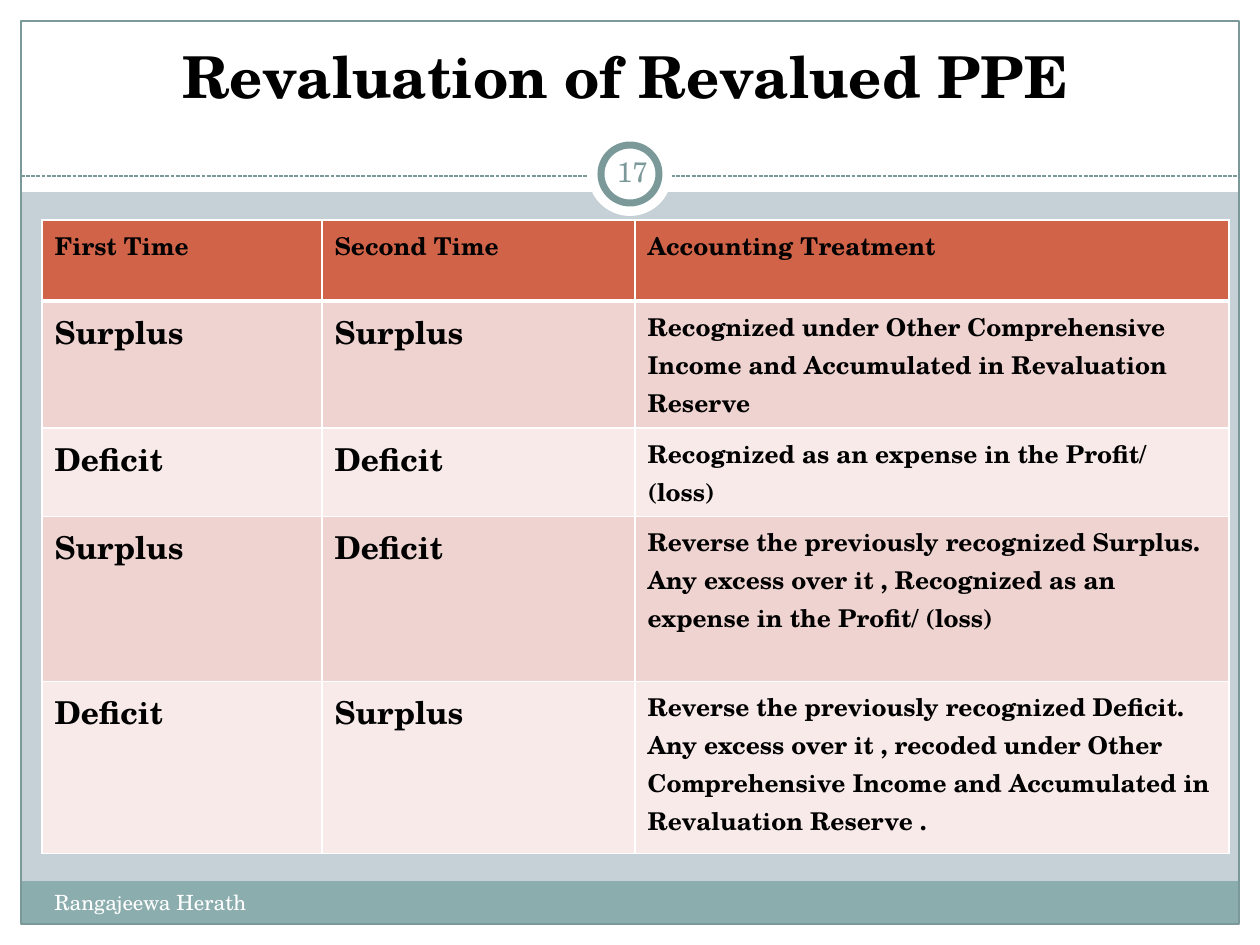
"""Build the slide on the revaluation of revalued PPE."""
import dataclasses
import typing

import pptx
import pptx.dml.color
import pptx.enum.dml
import pptx.enum.shapes
import pptx.enum.text
import pptx.oxml
import pptx.oxml.ns
import pptx.util

RGB = pptx.dml.color.RGBColor
Pt = pptx.util.Pt
SHAPE = pptx.enum.shapes.MSO_SHAPE
ALIGN = pptx.enum.text.PP_ALIGN
ANCHOR = pptx.enum.text.MSO_ANCHOR

WHITE = RGB(0xFF, 0xFF, 0xFF)
BLACK = RGB(0, 0, 0)
MIST = RGB(0xC5, 0xD1, 0xD7)
TEAL = RGB(0x8C, 0xAD, 0xAE)
SLATE = RGB(0x7C, 0x99, 0x9A)
RUST = RGB(0xD1, 0x63, 0x49)
ROSE = RGB(0xEE, 0xD3, 0xD0)
BLUSH = RGB(0xF7, 0xEA, 0xE9)

FONT = "TeX Gyre Schola"
SCALE = 914400 / 126
WIDE, HIGH = 1260, 945
EDGE = 21
RULE = 176
COLS = (280, 313, 594)
ROWS = (81, 127, 88, 165, 172)
CELLS = (
    ("First Time", "Second Time", "Accounting Treatment"),
    ("Surplus", "Surplus", "Recognized under Other Comprehensive Income and Accumulated in Revaluation Reserve"),
    ("Deficit", "Deficit", "Recognized as an expense in the Profit/ (loss)"),
    ("Surplus", "Deficit", "Reverse the previously recognized Surplus. Any excess over it , "
     "Recognized as an expense in the Profit/ (loss)"),
    ("Deficit", "Surplus", "Reverse the previously recognized Deficit. Any excess over it , recoded "
     "under Other Comprehensive Income and Accumulated in Revaluation Reserve ."),
)


class Box(typing.NamedTuple):
    """Hold a place and size in px."""
    left: int
    top: int
    width: int
    height: int


@dataclasses.dataclass
class Panel:
    """Describe a plain shape."""
    box: Box
    fill: RGB | None = WHITE
    line: float = 0
    kind: SHAPE = SHAPE.RECTANGLE


@dataclasses.dataclass
class Label:
    """Describe a text box."""
    box: Box
    text: str
    size: int
    color: RGB
    bold: bool = False
    align: ALIGN = ALIGN.LEFT
    frame: dict = dataclasses.field(default_factory=dict)


PANELS = (
    Panel(Box(0, HIGH - EDGE, WIDE, EDGE)),
    Panel(Box(0, 0, WIDE, 192)),
    Panel(Box(0, 0, EDGE, HIGH)),
    Panel(Box(WIDE - EDGE, 0, EDGE, HIGH)),
    Panel(Box(EDGE, 881, WIDE - 2 * EDGE, 43), TEAL),
    Panel(Box(EDGE, EDGE, WIDE - 2 * EDGE, HIGH - 2 * EDGE), None, 0.75),
)
RINGS = (
    Panel(Box(588, 132, 84, 84), kind=SHAPE.OVAL),
    Panel(Box(601, 145, 58, 58), line=4, kind=SHAPE.OVAL),
)
INSET = dict.fromkeys(("margin_left", "margin_top", "margin_right", "margin_bottom"), Pt(3.6))
LABELS = (
    Label(Box(32, 21, 1187, 95), "Revaluation of Revalued PPE", 33, BLACK, True, ALIGN.CENTER,
          {"vertical_anchor": ANCHOR.BOTTOM}),
    Label(Box(601, 141, 63, 60), "17", 16, SLATE, align=ALIGN.CENTER,
          frame={"vertical_anchor": ANCHOR.MIDDLE, **INSET}),
    Label(Box(42, 883, 494, 50), "Rangajeewa Herath", 12, WHITE),
)


def px(count: int) -> int:
    """Turn px into EMU."""
    return round(count * SCALE)


def place(box: Box) -> tuple[int, ...]:
    """Turn a box into EMU."""
    return tuple(map(px, box))


def format(thing: object, values: dict) -> None:
    """Set each named value on a thing."""
    for name, value in values.items():
        setattr(thing, name, value)


def write(frame: object, text: str, size: int, color: RGB, bold: bool) -> None:
    """Put one styled run in a text frame."""
    run = frame.paragraphs[0].add_run()
    run.text = text
    format(run.font, {"name": FONT, "size": Pt(size), "bold": bold})
    run.font.color.rgb = color


def draw_panel(shapes: object, panel: Panel) -> None:
    """Draw a plain shape."""
    shape = shapes.add_shape(panel.kind, *place(panel.box))
    shape.shadow.inherit = False
    if panel.fill is None:
        shape.fill.background()
    else:
        shape.fill.solid()
        shape.fill.fore_color.rgb = panel.fill
    if panel.line:
        shape.line.color.rgb = SLATE
        shape.line.width = Pt(panel.line)
    else:
        shape.line.fill.background()


def draw_rule(shapes: object) -> None:
    """Draw the dashed line below the title."""
    kind = pptx.enum.shapes.MSO_CONNECTOR.STRAIGHT
    rule = shapes.add_connector(kind, px(EDGE), px(RULE), px(WIDE - EDGE), px(RULE))
    rule.line.color.rgb = SLATE
    format(rule.line, {"width": Pt(0.75), "dash_style": pptx.enum.dml.MSO_LINE.SQUARE_DOT})
    rule._element.spPr.append(pptx.oxml.parse_xml(f"<a:effectLst {pptx.oxml.ns.nsdecls('a')}/>"))


def draw_label(shapes: object, label: Label) -> None:
    """Draw a text box."""
    frame = shapes.add_textbox(*place(label.box)).text_frame
    format(frame, {"word_wrap": True, **label.frame})
    write(frame, label.text, label.size, label.color, label.bold)
    frame.paragraphs[0].alignment = label.align


def edge_cell(cell: object, row: int) -> None:
    """Give a cell white borders, thick below the header."""
    widths = {"L": 1, "R": 1, "T": 3 if row == 1 else 1, "B": 3 if row == 0 else 1}
    for side, width in widths.items():
        cell._tc.get_or_add_tcPr().append(pptx.oxml.parse_xml(
            f'<a:ln{side} {pptx.oxml.ns.nsdecls("a")} w="{Pt(width)}"><a:solidFill>'
            f'<a:srgbClr val="{WHITE}"/></a:solidFill></a:ln{side}>'))


def draw_table(shapes: object) -> None:
    """Draw the table of treatments."""
    box = Box(42, 220, sum(COLS), sum(ROWS))
    table = shapes.add_table(len(ROWS), len(COLS), *place(box)).table
    format(table, {"first_row": False, "horz_banding": False})
    for col, width in zip(table.columns, COLS):
        col.width = px(width)
    for row, height in enumerate(ROWS):
        table.rows[row].height = px(height)
        for col, text in enumerate(CELLS[row]):
            cell = table.cell(row, col)
            edge_cell(cell, row)
            cell.fill.solid()
            cell.fill.fore_color.rgb = RUST if row == 0 else (BLUSH, ROSE)[row % 2]
            size = 18 if row and col < 2 else 14
            write(cell.text_frame, text, size, BLACK, True)


def main() -> None:
    """Build and save the slide."""
    deck = pptx.Presentation()
    format(deck, {"slide_width": px(WIDE), "slide_height": px(HIGH)})
    slide = deck.slides.add_slide(deck.slide_layouts[6])
    slide.background.fill.solid()
    slide.background.fill.fore_color.rgb = MIST
    for panel in PANELS:
        draw_panel(slide.shapes, panel)
    draw_rule(slide.shapes)
    for ring in RINGS:
        draw_panel(slide.shapes, ring)
    draw_table(slide.shapes)
    for label in LABELS:
        draw_label(slide.shapes, label)
    deck.save("out.pptx")


if __name__ == "__main__":
    main()
